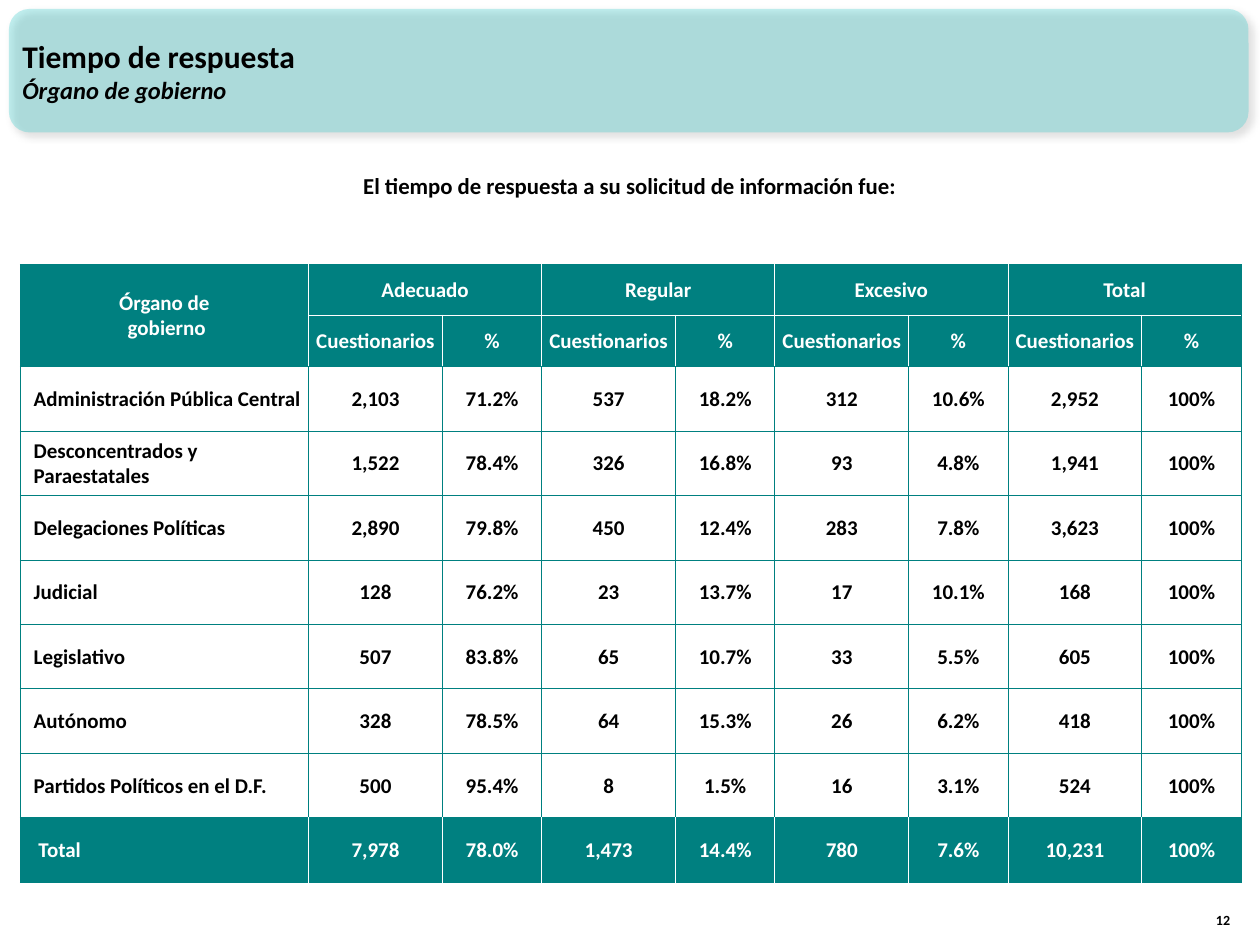
from dataclasses import dataclass

from lxml.etree import SubElement
from pptx import Presentation
from pptx.dml.color import RGBColor as RGB
from pptx.enum.shapes import MSO_SHAPE as SHAPE
from pptx.enum.text import MSO_ANCHOR as ANCHOR, PP_ALIGN as ALIGN
from pptx.oxml.ns import qn
from pptx.util import Cm, Pt


@dataclass(frozen=True)
class Theme:
    font: str = "Calibri"
    teal: str = "008080"
    aqua: str = "33CCCC"
    white: str = "FFFFFF"
    black: str = "000000"
    title: int = 18
    subtitle: int = 14
    question: int = 13
    table: int = 12
    number: int = 8
    border: float = 0.5


T = Theme()
GROUPS = ["Adecuado", "Regular", "Excesivo", "Total"]
BODY = [
    ["Administración Pública Central", "2,103", "71.2%", "537", "18.2%", "312", "10.6%", "2,952", "100%"],
    ["Desconcentrados y Paraestatales", "1,522", "78.4%", "326", "16.8%", "93", "4.8%", "1,941", "100%"],
    ["Delegaciones Políticas", "2,890", "79.8%", "450", "12.4%", "283", "7.8%", "3,623", "100%"],
    ["Judicial", "128", "76.2%", "23", "13.7%", "17", "10.1%", "168", "100%"],
    ["Legislativo", "507", "83.8%", "65", "10.7%", "33", "5.5%", "605", "100%"],
    ["Autónomo", "328", "78.5%", "64", "15.3%", "26", "6.2%", "418", "100%"],
    ["Partidos Políticos en el D.F.", "500", "95.4%", "8", "1.5%", "16", "3.1%", "524", "100%"],
    [" Total", "7,978", "78.0%", "1,473", "14.4%", "780", "7.6%", "10,231", "100%"],
]


def write(p, text, size, color=T.black, align=ALIGN.LEFT, italic=False):
    """Add one bold run to a paragraph."""
    p.alignment = align
    r = p.add_run()
    r.text = text
    r.font.name, r.font.size = T.font, Pt(size)
    r.font.bold, r.font.italic = True, italic
    r.font.color.rgb = RGB.from_string(color)


def add_text(s, box, lines, align=ALIGN.LEFT, anchor=ANCHOR.TOP):
    """Add a text box with one paragraph per (text, size, italic) line."""
    tf = s.shapes.add_textbox(*map(Cm, box)).text_frame
    tf.word_wrap = True
    tf.vertical_anchor = anchor
    for i, (text, size, italic) in enumerate(lines):
        p = tf.add_paragraph() if i else tf.paragraphs[0]
        write(p, text, size, align=align, italic=italic)


def add_alpha(color, percent):
    """Set the opacity of a colour element."""
    SubElement(color, qn("a:alpha"), val=str(percent * 1000))


def add_banner(s):
    """Add the translucent rounded banner with its soft shadow."""
    sp = s.shapes.add_shape(SHAPE.ROUNDED_RECTANGLE, Cm(0.18), Cm(0.18), Cm(24.99), Cm(2.49))
    sp.shadow.inherit = False
    sp.fill.solid()
    sp.fill.fore_color.rgb = RGB.from_string(T.aqua)
    sp.line.fill.background()
    spPr = sp.element.spPr
    add_alpha(spPr.find(qn("a:solidFill"))[0], 30)
    shadow = SubElement(spPr.find(qn("a:effectLst")), qn("a:outerShdw"), blurRad=str(Pt(4)),
                        dist=str(Pt(3)), dir=str(45 * 60000), algn="tl", rotWithShape="0")
    add_alpha(SubElement(shadow, qn("a:srgbClr"), val=T.black), 40)


def style_cell(cell, fill, borders):
    """Set margins, the left, right, top and bottom borders, and the fill."""
    cell.vertical_anchor = ANCHOR.MIDDLE
    cell.margin_left = cell.margin_right = cell.margin_top = Cm(0.02)
    cell.margin_bottom = 0
    tcPr = cell._tc.get_or_add_tcPr()
    for side, color in zip("LRTB", borders):
        ln = SubElement(tcPr, qn(f"a:ln{side}"), w=str(Pt(T.border)))
        SubElement(SubElement(ln, qn("a:solidFill")), qn("a:srgbClr"), val=color)
    cell.fill.solid()
    cell.fill.fore_color.rgb = RGB.from_string(fill)


def border_colors(row, col, dark, cols):
    """Return white between two dark cells and teal elsewhere."""
    last = cols - 2 if row == 0 else cols - 1
    inner = (dark and col > 0, dark and col < last, row == 1 and col > 0, row == 0 and col > 0)
    return [T.white if white else T.teal for white in inner]


def add_results(s):
    """Add the table of answers by government body."""
    heads = [text for group in GROUPS for text in (group, "")]
    rows = [["Órgano de\n gobierno"] + heads, [""] + ["Cuestionarios", "%"] * len(GROUPS)] + BODY
    widths = [5.81] + [2.7, 2] * len(GROUPS)
    heights = [1.02] * 2 + [1.3] * len(BODY)
    table = s.shapes.add_table(len(rows), len(widths), Cm(0.41), Cm(5.33),
                               Cm(sum(widths)), Cm(sum(heights))).table
    table.first_row = table.horz_banding = False
    for column, width in zip(table.columns, widths):
        column.width = Cm(width)
    for i, texts in enumerate(rows):
        table.rows[i].height = Cm(heights[i])
        dark = i < 2 or i == len(rows) - 1
        for j, text in enumerate(texts):
            cell = table.cell(i, j)
            style_cell(cell, T.teal if dark else T.white, border_colors(i, j, dark, len(texts)))
            label = j == 0 and i > 1
            for k, line in enumerate(text.split("\n") if text else []):
                p = cell.text_frame.add_paragraph() if k else cell.text_frame.paragraphs[0]
                if label:
                    pPr = p._p.get_or_add_pPr()
                    pPr.set("marL", str(Cm(0.25)))
                    pPr.set("indent", "0")
                write(p, line, T.table, T.white if dark else T.black, ALIGN.LEFT if label else ALIGN.CENTER)
    table.cell(0, 0).merge(table.cell(1, 0))
    for j in range(1, len(widths), 2):
        table.cell(0, j).merge(table.cell(0, j + 1))


def main():
    """Build the slide and save it."""
    prs = Presentation()
    prs.slide_width, prs.slide_height = Cm(25.4), Cm(19.05)
    s = prs.slides.add_slide(prs.slide_layouts[6])
    add_banner(s)
    add_text(s, (24.03, 17.81, 1.02, 1.02), [("12", T.number, False)], ALIGN.RIGHT, ANCHOR.BOTTOM)
    add_text(s, (0.2, 0.23, 23.5, 2.39), [("Tiempo de respuesta", T.title, False),
                                        ("Órgano de gobierno", T.subtitle, True)], anchor=ANCHOR.MIDDLE)
    add_results(s)
    add_text(s, (2.26, 3.33, 20.85, 0.81),
             [("El tiempo de respuesta a su solicitud de información fue:", T.question, False)], ALIGN.CENTER)
    prs.save("out.pptx")


if __name__ == "__main__":
    main()
